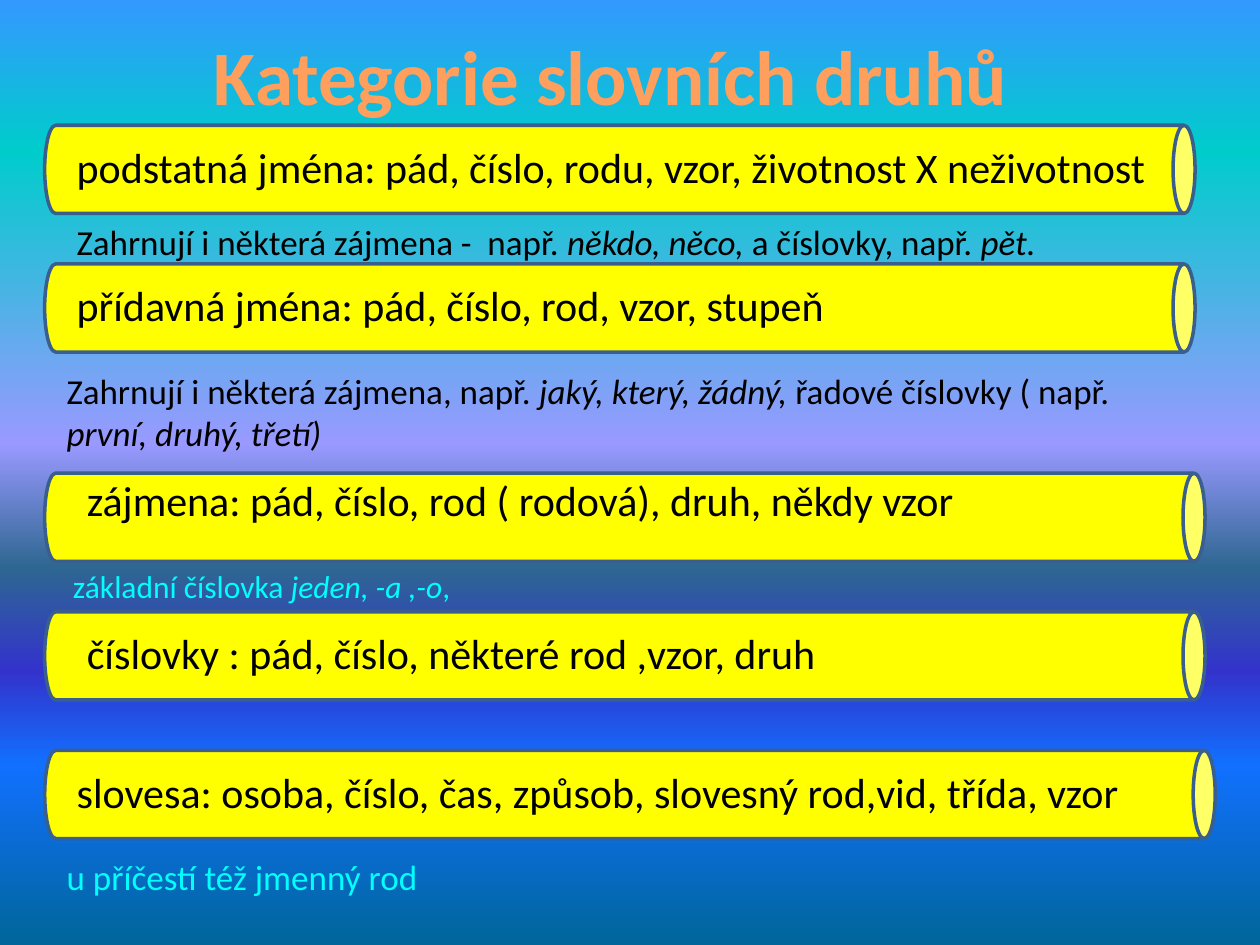
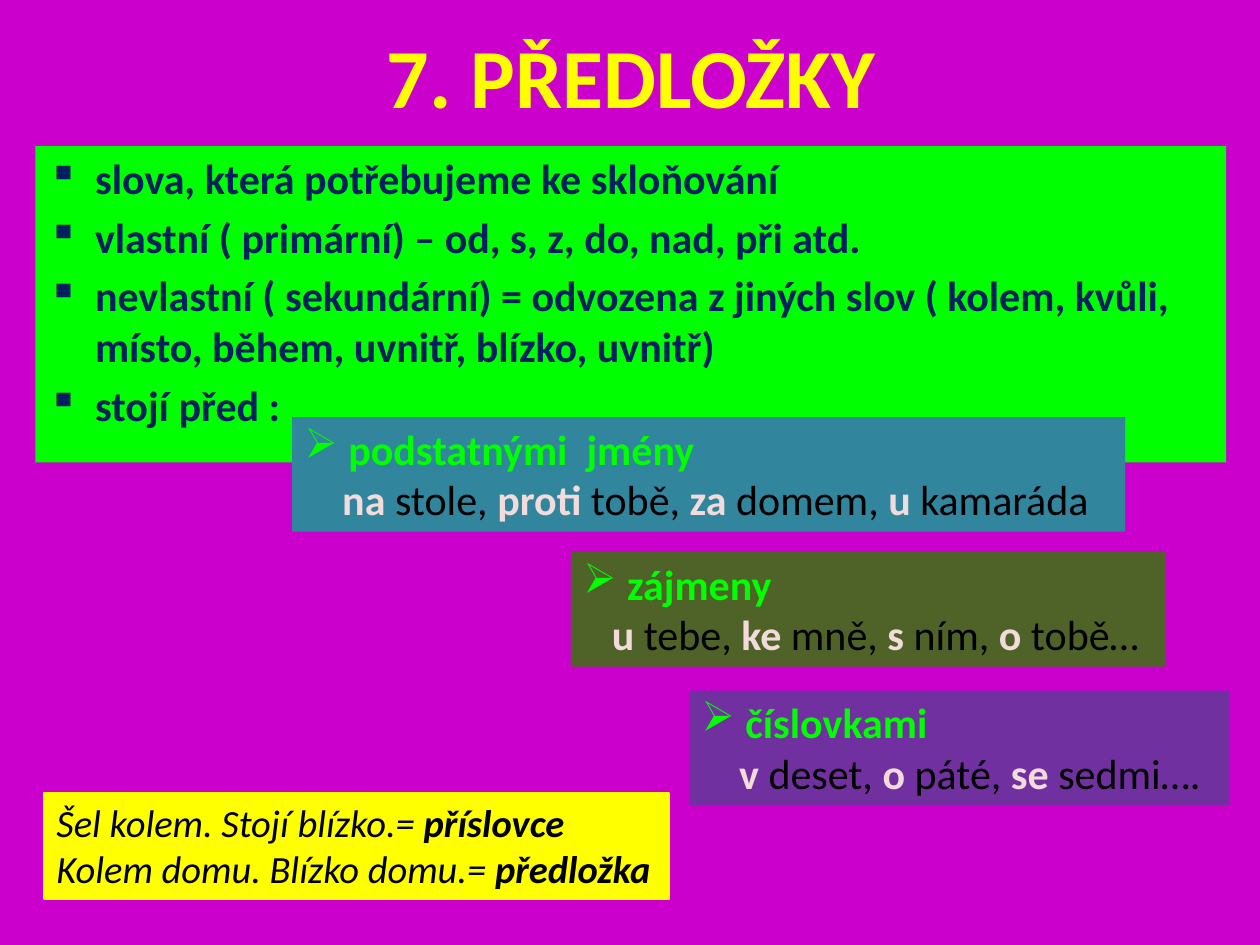
from dataclasses import dataclass, field

from lxml import etree
from pptx import Presentation
from pptx.dml.color import RGBColor
from pptx.enum.shapes import MSO_SHAPE as SHAPE
from pptx.enum.text import MSO_ANCHOR as ANCHOR, PP_ALIGN as ALIGN
from pptx.oxml.ns import qn
from pptx.util import Pt

FONT = "Calibri"
BLACK, YELLOW, LIME, CYAN = "000000", "FFFF00", "00FF00", "00FFFF"
NAVY, ROSE, MAGENTA, CAN_LINE = "002060", "F2DCDB", "CC00CC", "3A5F8C"
SKY = [(0, "3399FF"), (16, "00CCCC"), (47, "9999FF"), (60, "2E6792"),
       (71, "3333CC"), (81, "1170FF"), (100, "006699")]
COPPER = [(0, "FFA367"), (25, "FF9F5D"), (50, "F38E3A"),
          (75, "FF9F5D"), (100, "FFA367")]

TITLE_TOP, TITLE_W, TITLE_H = -2.2, 648, 90
CAN_LEFT, CAN_H, CAN_STEP = 25.5, 50.4, 79.2
NOUN_TOP, PRONOUN_TOP = 71.6, 270.4
LABEL_DROP = 5.6


@dataclass
class Box:
    left: float
    top: float
    width: float
    height: float


@dataclass
class Style:
    size: float
    color: str = BLACK
    bold: bool = False
    italic: bool = False


@dataclass
class Para:
    """Text in which *starred* parts take the emphasis style."""
    text: str
    style: Style
    emphasis: Style | None = None
    bullet: str = ""
    margin: float = 0
    before: float = 0


@dataclass
class Category:
    text: str
    top: float
    can_width: float
    label: Box


@dataclass
class Panel:
    box: Box
    fill: str
    paras: list[Para] = field(default_factory=list)
    wrap: bool = True


def rgb(color: str) -> RGBColor:
    return RGBColor.from_string(color)


def place(box: Box) -> list[int]:
    return [Pt(v) for v in (box.left, box.top, box.width, box.height)]


def set_gradient(fill, element, stops: list[tuple[int, str]]) -> None:
    """Fill from top to bottom; element is the XML that holds the fill."""
    fill.gradient()
    fill.gradient_angle = 270
    gs_list = next(element.iter(qn("a:gsLst")))
    for gs in list(gs_list):
        gs_list.remove(gs)
    for pos, color in stops:
        gs = etree.SubElement(gs_list, qn("a:gs"), pos=str(pos * 1000))
        etree.SubElement(gs, qn("a:srgbClr"), val=color)


def add_run(p, text: str, style: Style):
    r = p.add_run()
    r.text = text
    formats = {"name": FONT, "size": Pt(style.size),
               "bold": style.bold, "italic": style.italic}
    for name, value in formats.items():
        setattr(r.font, name, value)
    r.font.color.rgb = rgb(style.color)
    return r


def write(tf, paras: list[Para], wrap: bool = True) -> None:
    tf.word_wrap = wrap
    tf.vertical_anchor = ANCHOR.TOP
    for i, para in enumerate(paras):
        p = tf.add_paragraph() if i else tf.paragraphs[0]
        p.alignment = ALIGN.LEFT
        if para.before:
            p.space_before = Pt(para.before)
        if para.margin:
            ppr = p._p.get_or_add_pPr()
            ppr.set("marL", str(Pt(para.margin)))
            if para.bullet:
                ppr.set("indent", str(-Pt(para.margin)))
                etree.SubElement(ppr, qn("a:buChar"), char=para.bullet)
        for k, part in enumerate(para.text.split("*")):
            if part:
                add_run(p, part, para.emphasis if k % 2 else para.style)


def add_text(slide, box: Box, para: Para, wrap: bool = False) -> None:
    write(slide.shapes.add_textbox(*place(box)).text_frame, [para], wrap)


def add_title(slide, text: str, left: float, style: Style):
    s = slide.shapes.add_textbox(*place(Box(left, TITLE_TOP, TITLE_W, TITLE_H)))
    tf = s.text_frame
    tf.word_wrap = True
    tf.vertical_anchor = ANCHOR.MIDDLE
    p = tf.paragraphs[0]
    p.alignment = ALIGN.CENTER
    return add_run(p, text, style)


def add_filled(slide, kind: SHAPE, box: Box, fill: str):
    s = slide.shapes.add_shape(kind, *place(box))
    s.shadow.inherit = False
    s.fill.solid()
    s.fill.fore_color.rgb = rgb(fill)
    s.line.fill.background()
    return s


def add_can(slide, top: float, length: float) -> None:
    """A can lying on its side, so its box is turned about its centre."""
    left = CAN_LEFT + (length - CAN_H) / 2
    upright = Box(left, top - (length - CAN_H) / 2, CAN_H, length)
    s = add_filled(slide, SHAPE.CAN, upright, YELLOW)
    s.rotation = 90
    s.line.color.rgb = rgb(CAN_LINE)
    s.line.width = Pt(2)


def build_categories(slide) -> None:
    set_gradient(slide.background.fill, slide.element, SKY)
    r = add_title(slide, "Kategorie slovních druhů", 25.2,
                  Style(44, bold=True))
    set_gradient(r.font.fill, r._r, COPPER)

    categories = [
        Category("podstatná jména: pád, číslo, rodu, vzor, životnost X neživotnost",
                 NOUN_TOP, 657.4, Box(36.7, NOUN_TOP + LABEL_DROP, 674.6, 36)),
        Category("přídavná jména: pád, číslo, rod, vzor, stupeň",
                 NOUN_TOP + CAN_STEP, 657.4,
                 Box(36.7, NOUN_TOP + CAN_STEP + LABEL_DROP, 445.7, 36)),
        Category("zájmena: pád, číslo, rod ( rodová), druh, někdy vzor",
                 PRONOUN_TOP, 663.1, Box(42.5, 267.8, 519.8, 36)),
        Category("číslovky : pád, číslo, některé rod ,vzor, druh",
                 PRONOUN_TOP + CAN_STEP, 663.1,
                 Box(42.5, PRONOUN_TOP + CAN_STEP + LABEL_DROP, 452.9, 36)),
        Category("slovesa: osoba, číslo, čas, způsob, slovesný rod,vid, třída, vzor",
                 PRONOUN_TOP + 2 * CAN_STEP, 668.9,
                 Box(36.7, PRONOUN_TOP + 2 * CAN_STEP + LABEL_DROP, 615.6, 36)),
    ]
    for c in categories:
        add_can(slide, c.top, c.can_width)
    for c in categories:
        add_text(slide, c.label, Para(c.text, Style(24)))

    note, note_it = Style(20), Style(20, italic=True)
    add_text(slide, Box(36.7, 122.4, 601.2, 31.7),
             Para("Zahrnují i některá zájmena -  např. *někdo, něco,* "
                  "a číslovky, např. *pět.*", note, note_it), wrap=True)
    add_text(slide, Box(31, 207.4, 640.8, 55.4),
             Para("Zahrnují i některá zájmena, např. *jaký, který, žádný, *"
                  "řadové číslovky ( např. *první, druhý, třetí)*",
                  note, note_it), wrap=True)
    add_text(slide, Box(34.6, 320.4, 236.9, 28.8),
             Para("základní číslovka *jeden, -a ,-o*,", Style(18, CYAN),
                  Style(18, CYAN, italic=True)))
    add_text(slide, Box(31, 485.3, 216.7, 31.7),
             Para("u příčestí též jmenný rod", Style(20, CYAN)))


def examples(heading: str, text: str, margin: float) -> list[Para]:
    return [Para(heading, Style(24, LIME, bold=True), bullet="➢", margin=25),
            Para(text, Style(24), Style(24, ROSE, bold=True), margin=margin)]


def build_prepositions(slide) -> None:
    slide.background.fill.solid()
    slide.background.fill.fore_color.rgb = rgb(MAGENTA)
    add_title(slide, "7. PŘEDLOŽKY", 36.7, Style(48, YELLOW, bold=True))

    rules = ["slova, která potřebujeme ke skloňování",
             "vlastní ( primární) – od, s, z, do, nad, při atd.",
             "nevlastní ( sekundární) = odvozena z jiných slov "
             "( kolem, kvůli, místo, během, uvnitř, blízko, uvnitř)",
             "stojí před :"]
    navy = Style(24, NAVY, bold=True)
    plain = Style(22, italic=True)
    strong = Style(22, bold=True, italic=True)
    panels = [
        Panel(Box(20.2, 83.5, 680.4, 180.7), LIME,
              [Para(t, navy, bullet="▪", margin=27, before=4.8) for t in rules]),
        Panel(Box(167, 238.3, 475.9, 65.5), "31859C",
              examples("podstatnými  jmény",
                       "*na *stole, *proti* tobě, *za* domem, *u *kamaráda", 21.5)),
        Panel(Box(326.2, 315.4, 339.8, 65.5), "4F6228",
              examples("zájmeny", "*u *tebe, *ke* mně, *s *ním, *o* tobě…", 16.3)),
        Panel(Box(393.8, 394.6, 308.9, 65.5), "7030A0",
              examples("číslovkami", "*v *deset, *o* páté, *se* sedmi….", 21.5)),
        Panel(Box(25.2, 453.2, 357.1, 60.5), YELLOW,
              [Para("Šel kolem. Stojí blízko.= *příslovce*", plain, strong),
               Para("Kolem domu. Blízko domu.= *předložka*", plain, strong)],
              wrap=False),
    ]
    for panel in panels:
        s = add_filled(slide, SHAPE.RECTANGLE, panel.box, panel.fill)
        write(s.text_frame, panel.paras, panel.wrap)
    s.line.color.rgb = rgb(YELLOW)
    s.line.width = Pt(0.75)


def main() -> None:
    prs = Presentation()
    prs.slide_width, prs.slide_height = Pt(720), Pt(540)
    for build in (build_categories, build_prepositions):
        build(prs.slides.add_slide(prs.slide_layouts[6]))
    prs.save("out.pptx")


if __name__ == "__main__":
    main()
